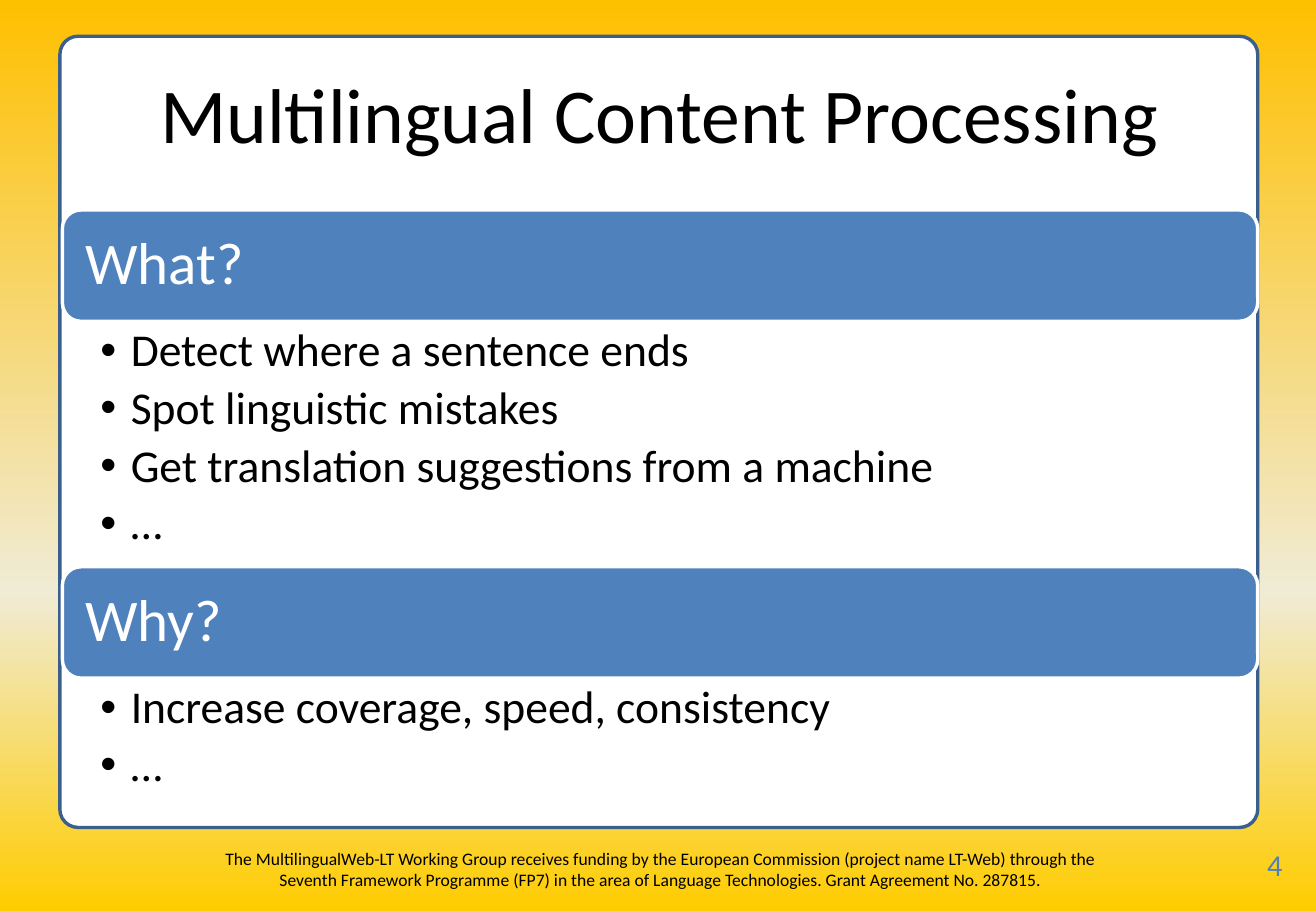
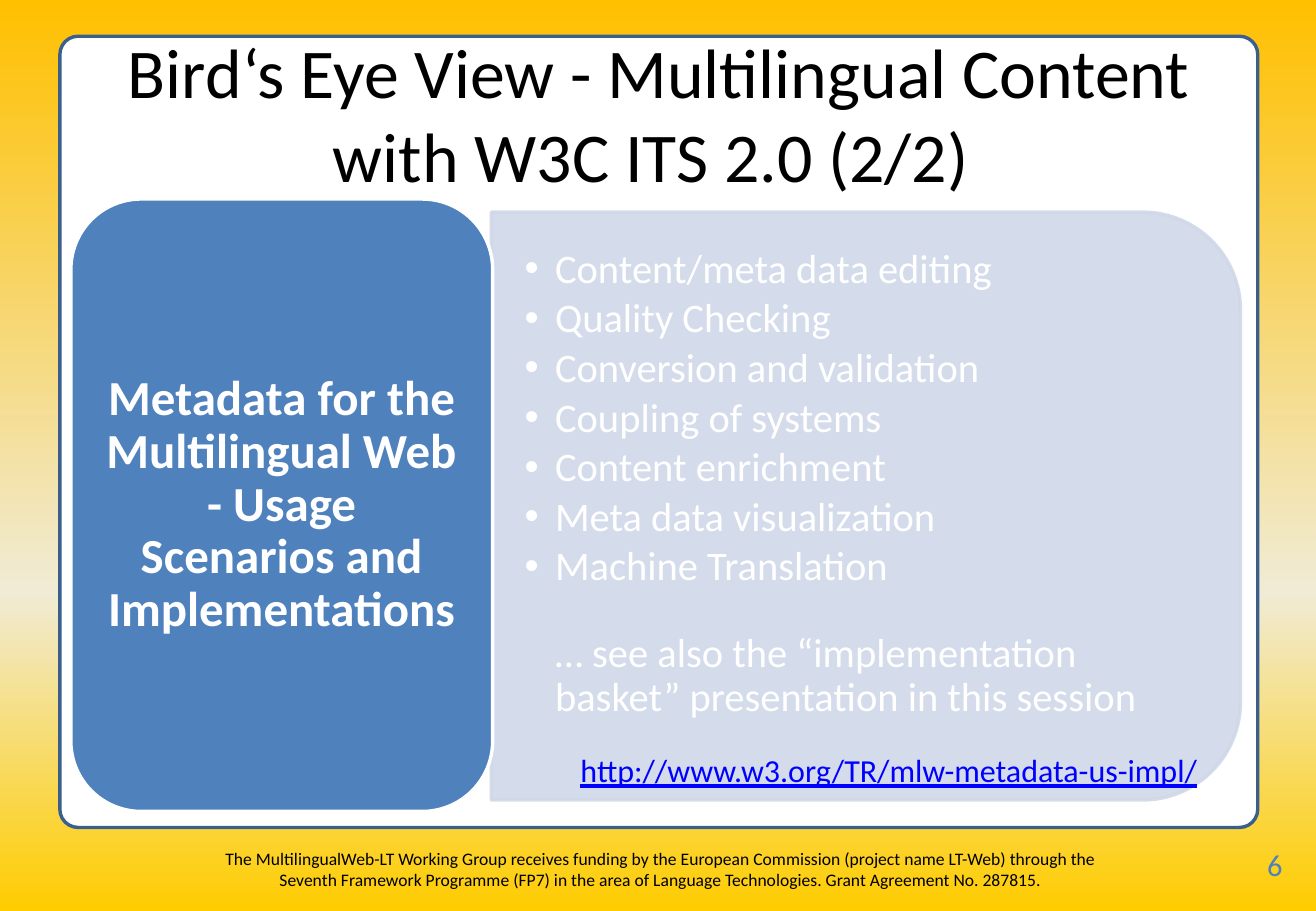
from copy import deepcopy
from lxml import etree
from pptx import Presentation
from pptx.dml.color import RGBColor
from pptx.enum.shapes import MSO_SHAPE as Kind
from pptx.enum.text import MSO_ANCHOR as Anchor, MSO_AUTO_SIZE as Fit, PP_ALIGN as Align
from pptx.oxml.ns import qn
from pptx.util import Pt

BLACK, WHITE, BLUE, PALE = "000000", "FFFFFF", "4F81BD", "D0D8E8"
rgb = RGBColor.from_string


def write(box, lines, size, color, inset=(7.2, 3.6, 7.2, 3.6), align=Align.LEFT,
          anchor=Anchor.TOP, space=None, after=0, bullet=False, bold=False):
    """Fill a box with paragraphs of one style."""
    frame = box.text_frame
    frame.word_wrap, frame.auto_size, frame.vertical_anchor = True, Fit.NONE, anchor
    (frame.margin_left, frame.margin_top,
     frame.margin_right, frame.margin_bottom) = map(Pt, inset)
    for i, line in enumerate(lines):
        para = frame.add_paragraph() if i else frame.paragraphs[0]
        para.text, para.alignment = line, align
        para.space_before, para.space_after = Pt(0), Pt(after)
        if space:
            para.line_spacing = space
        if bullet:
            props = para._p.get_or_add_pPr()
            props.set("marL", str(Pt(18)))
            props.set("indent", str(-Pt(18)))
            etree.SubElement(props, qn("a:buChar")).set("char", "•")
        font = para.font
        font.name, font.size, font.bold = "Calibri", Pt(size), bold
        font.color.rgb = rgb(color)


def draw(slide, kind, at, fill, line):
    """Add a flat preset shape with a 2 pt outline."""
    shape = slide.shapes.add_shape(kind, *map(Pt, at))
    shape.shadow.inherit = False
    shape.fill.solid()
    shape.fill.fore_color.rgb = rgb(fill)
    shape.line.color.rgb = rgb(line)
    shape.line.width = Pt(2)
    return shape


deck = Presentation()
deck.slide_width, deck.slide_height = Pt(780), Pt(540)
master = deck.slide_master

# Background gradient on the master
back = master.background.fill
back.gradient()
back.gradient_angle = 270
stops = master._element.find(".//" + qn("a:gsLst"))
stops.insert(1, deepcopy(stops[0]))
for stop, (pos, color) in zip(back.gradient_stops,
                              [(0, "FFC000"), (0.65, "F0EBD5"), (1, "FFCC00")]):
    stop.position, stop.color.rgb = pos, rgb(color)

# Slides with title and page number
pages = []
for layout, title, size, num in [
        (3, "Multilingual Content Processing", 46, "4"),
        (1, "Bird‘s Eye View - Multilingual Content with W3C ITS 2.0 (2/2) ", 41.4, "6")]:
    slide = deck.slides.add_slide(deck.slide_layouts[layout])
    pages.append(slide)
    head = slide.shapes.title
    head.left, head.top, head.width, head.height = map(Pt, (36.5, 21.5, 708, 90))
    write(head, [title], size, BLACK, align=Align.CENTER, anchor=Anchor.MIDDLE)
    page = slide.shapes.add_textbox(*map(Pt, (749.5, 501, 30, 29)))
    write(page, [num], 18, BLUE, inset=(1.5, 0.75, 1.5, 0.75))
what, view = pages

# White panel and funding note, moved to the master
panel = draw(what, Kind.ROUNDED_RECTANGLE, (35.5, 21.5, 710, 469), WHITE, "3A5F8C")
panel.adjustments[0] = 0.023
note = what.shapes.add_textbox(*map(Pt, (116.5, 499, 550, 29)))
write(note, ["The MultilingualWeb-LT Working Group receives funding by the European "
             "Commission (project name LT-Web) through the Seventh Framework Programme "
             "(FP7) in the area of Language Technologies. Grant Agreement No. 287815."],
      10.4, BLACK, align=Align.CENTER)
for i, part in enumerate((panel, note)):
    part._element.nvSpPr.cNvPr.set("id", str(20 + i))
    master.shapes._spTree.insert(2 + i, part._element)

# Slide 1: bands, each with a list below
top, band = 124.5, 66
for body, (name, tall, items) in zip(list(what.placeholders)[1:], [
        ("What?", 145.5, ["Detect where a sentence ends", "Spot linguistic mistakes",
                          "Get translation suggestions from a machine", "…"]),
        ("Why?", 74, ["Increase coverage, speed, consistency", "…"])]):
    bar = draw(what, Kind.ROUNDED_RECTANGLE, (37, top, 708.5, band), BLUE, WHITE)
    write(bar, [name], 35, WHITE, inset=(10.5,) * 4, anchor=Anchor.MIDDLE, space=0.9)
    top += band
    body.left, body.top, body.width, body.height = map(Pt, (37, top, 708.5, tall))
    write(body, items, 27, BLACK, inset=(22.5, 3.6, 19.5, 3.6), space=0.9,
          after=5, bullet=True)
    top += tall

# Slide 2: pale sheet behind the list
sheet = draw(view, Kind.ROUND_2_SAME_RECTANGLE, (339, 78, 348.5, 444), PALE, PALE)
sheet.rotation = 90
for tint in sheet._element.spPr.iter(qn("a:srgbClr")):
    etree.SubElement(tint, qn("a:alpha")).set("val", "90000")

# Usage list, ending in a remark without bullet
body = view.placeholders[1]
body.left, body.top, body.width, body.height = map(Pt, (291.5, 142.5, 427, 315))
write(body, ["Content/meta data editing", "Quality Checking", "Conversion and validation",
             "Coupling of systems", "Content enrichment", "Meta data visualization",
             "Machine Translation",
             "… see also the “implementation basket” presentation in this session"],
      24, WHITE, inset=(19.5, 10, 19.5, 36), anchor=Anchor.MIDDLE, space=0.9,
      after=3.5, bullet=True)
last = body.text_frame.paragraphs[-1]
last.space_before = Pt(22)
props = last._p.pPr
props.set("indent", "0")
mark = props.find(qn("a:buChar"))
props.replace(mark, etree.Element(qn("a:buNone")))
view.shapes._spTree.append(body._element)

# Blue card and address
card = draw(view, Kind.ROUNDED_RECTANGLE, (42, 118, 250, 363), BLUE, WHITE)
write(card, ["Metadata for the Multilingual Web - Usage Scenarios and Implementations"],
      29, WHITE, inset=(8.6, 4.3, 8.6, 4.3), align=Align.CENTER,
      anchor=Anchor.MIDDLE, space=0.9, bold=True)
site = view.shapes.add_textbox(*map(Pt, (337, 441.5, 390, 30)))
write(site, ["http://www.w3.org/TR/mlw-metadata-us-impl/"], 19, "0000FF")
site.text_frame.paragraphs[0].font.underline = True

deck.save("out.pptx")
